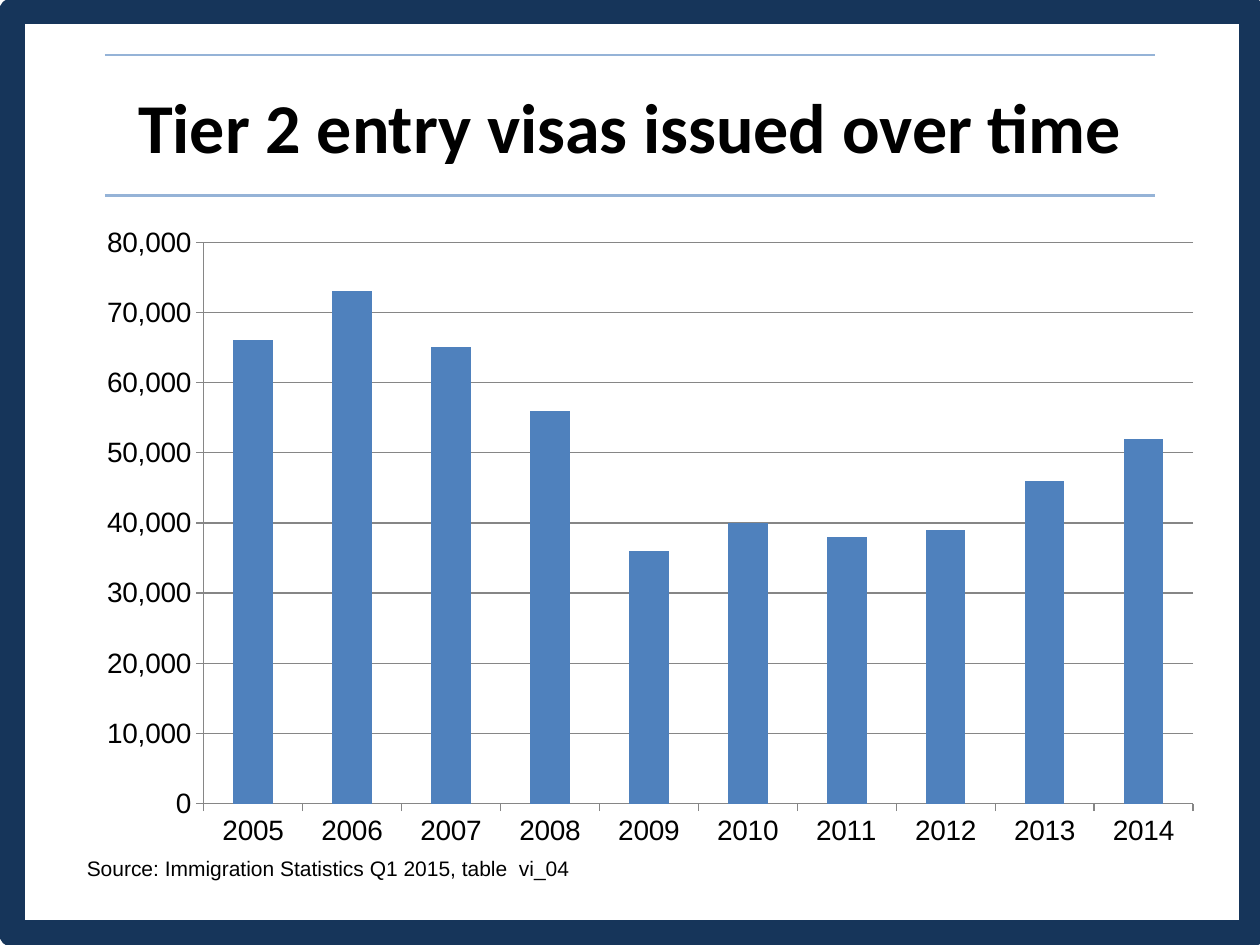
from lxml import etree
from pptx import Presentation
from pptx import util as u
from pptx.chart.data import CategoryChartData
from pptx.dml.color import RGBColor
from pptx.enum import chart as ch, shapes, text
from pptx.oxml.ns import qn

Pt = u.Pt
NAVY = RGBColor(0x16, 0x35, 0x5A)
RULE = RGBColor(0x95, 0xB3, 0xD7)
BAR = RGBColor(0x4F, 0x81, 0xBD)
GREY = RGBColor(0x86, 0x86, 0x86)
BLACK = RGBColor(0, 0, 0)

prs = Presentation()
prs.slide_width, prs.slide_height = Pt(720), Pt(540)
s = prs.slides.add_slide(prs.slide_layouts[6])


def set_font(font, **values):
    font.color.rgb = BLACK
    for key, value in values.items():
        setattr(font, key, value)


def add_text(words, box, align, anchor, **values):
    tf = s.shapes.add_textbox(*map(Pt, box)).text_frame
    tf.word_wrap = True
    tf.vertical_anchor = anchor
    p = tf.paragraphs[0]
    p.alignment = align
    r = p.add_run()
    r.text = words
    set_font(r.font, **values)


# Rules above and below the title
for y in (111.6, 31.5):
    rule = s.shapes.add_connector(shapes.MSO_CONNECTOR.STRAIGHT,
                                  Pt(60), Pt(y), Pt(660), Pt(y))
    rule.line.color.rgb = RULE
    rule.line.width = Pt(1.5)
    etree.SubElement(rule._element.spPr, qn("a:effectLst"))

# Slide border
frame = s.shapes.add_shape(shapes.MSO_SHAPE.RECTANGLE,
                           Pt(7), Pt(6.5), Pt(708.5), Pt(527))
frame.shadow.inherit = False
frame.fill.background()
frame.line.color.rgb = NAVY
frame.line.width = Pt(15)

add_text("Tier 2 entry visas issued over time", (36, 31.5, 648, 80),
         text.PP_ALIGN.CENTER, text.MSO_ANCHOR.MIDDLE,
         name="Calibri", size=Pt(40), bold=True)
add_text("Source: Immigration Statistics Q1 2015, table  vi_04",
         (42.5, 485.3, 646.5, 22), text.PP_ALIGN.LEFT, text.MSO_ANCHOR.TOP,
         name="Arial", size=Pt(12))

# Visas per year
data = CategoryChartData(number_format="#,##0")
data.categories = [str(year) for year in range(2005, 2015)]
data.add_series("Visas issued", [66000, 73000, 65000, 56000, 36000,
                                 40000, 38000, 39000, 46000, 52000])
chart = s.shapes.add_chart(ch.XL_CHART_TYPE.COLUMN_CLUSTERED, Pt(48.2), Pt(122.4),
                           Pt(646.5), Pt(368.6), data).chart
chart.has_legend = False
chart.has_title = False
set_font(chart.font, name="Arial", size=Pt(10))

plot = chart.plots[0]
plot.gap_width = 150
plot.vary_by_categories = False
fill = plot.series[0].format.fill
fill.solid()
fill.fore_color.rgb = BAR

values = chart.value_axis
values.minimum_scale, values.maximum_scale, values.major_unit = 0, 80000, 10000
values.has_major_gridlines = True
values.tick_labels.number_format = "#,##0"
values.tick_labels.number_format_is_linked = False
for axis in (chart.category_axis, values):
    axis.major_tick_mark = ch.XL_TICK_MARK.OUTSIDE
    set_font(axis.tick_labels.font, name="Arial", size=Pt(16))
for line in (chart.category_axis.format.line, values.format.line,
             values.major_gridlines.format.line):
    line.color.rgb = GREY
    line.width = Pt(0.75)

prs.save("out.pptx")
